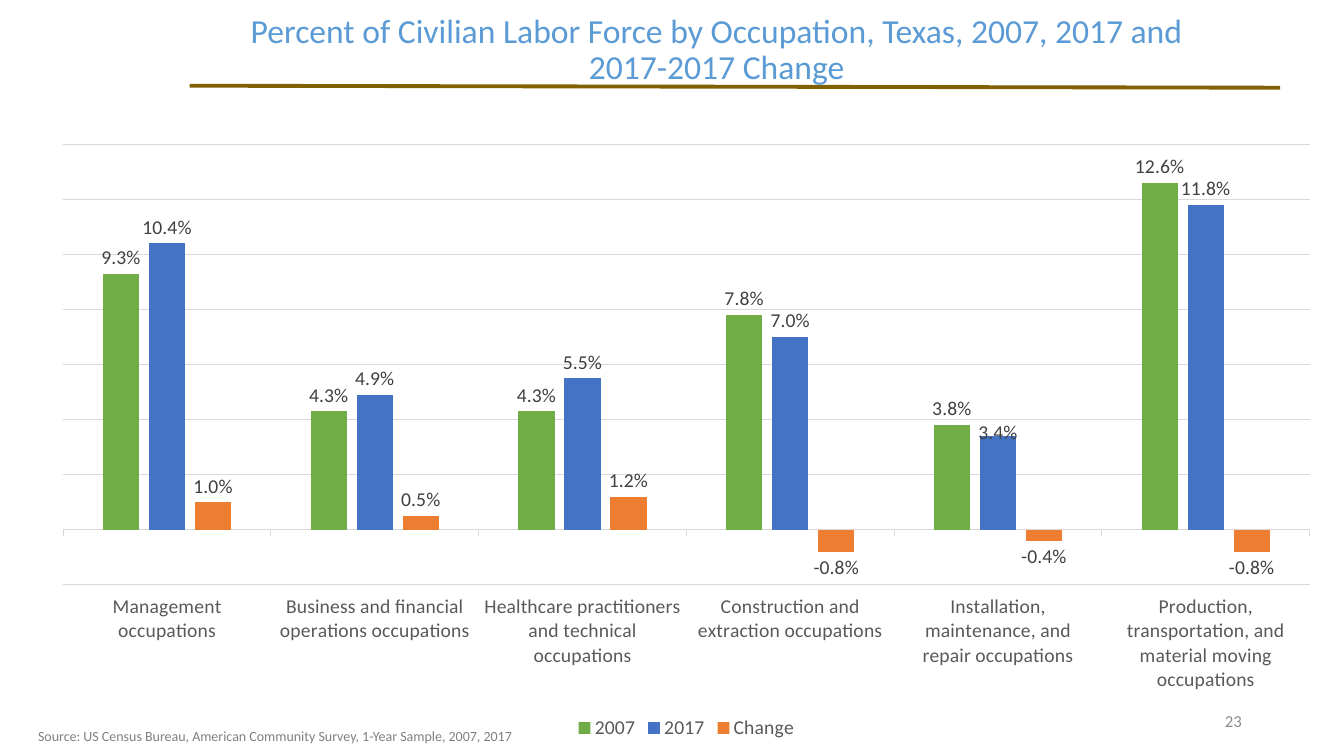
from lxml.etree import SubElement
from pptx import Presentation
from pptx.chart.data import CategoryChartData
from pptx.dml.color import RGBColor
from pptx.enum.chart import XL_CHART_TYPE as ChartType
from pptx.enum.chart import XL_LABEL_POSITION as LabelPosition
from pptx.enum.chart import XL_LEGEND_POSITION as LegendPosition
from pptx.enum.chart import XL_TICK_LABEL_POSITION as TickLabelPosition
from pptx.enum.chart import XL_TICK_MARK as TickMark
from pptx.enum.shapes import MSO_CONNECTOR as Connector
from pptx.enum.text import MSO_ANCHOR as Anchor
from pptx.enum.text import PP_ALIGN as Align
from pptx.oxml import parse_xml
from pptx.oxml.ns import nsdecls, qn
from pptx.util import Cm, Pt

TITLE = "Percent of Civilian Labor Force by Occupation, Texas, 2007, 2017 and 2017-2017 Change"
SOURCE = "Source: US Census Bureau, American Community Survey, 1-Year Sample, 2007, 2017"
PAGE_NUMBER = "23"

OCCUPATIONS = [
    "Management occupations",
    "Business and financial operations occupations",
    "Healthcare practitioners and technical occupations",
    "Construction and extraction occupations",
    "Installation, maintenance, and repair occupations",
    "Production, transportation, and material moving occupations",
]
SERIES = [
    ("2007", "70AD47", (0.093, 0.043, 0.043, 0.078, 0.038, 0.126)),
    ("2017", "4472C4", (0.104, 0.049, 0.055, 0.07, 0.034, 0.118)),
    ("Change", "ED7D31", (0.01, 0.005, 0.012, -0.008, -0.004, -0.008)),
]
LOWERED_LABEL = (1, 4, 0.02)
PLOT_AREA = {"x": 0.02, "y": 0.02, "w": 0.96, "h": 0.72}
PERCENT = "0.0%"

THEME = {
    "font": "Calibri",
    "title": ("5B9BD5", 24),
    "source": ("808080", 10),
    "page": ("8C8C8C", 12),
    "axis": ("595959", 14),
    "label": ("404040", 14),
    "grid": "D9D9D9",
    "rule": "806000",
}


def style_font(font, role):
    color, size = THEME[role]
    font.name = THEME["font"]
    font.size = Pt(size)
    font.bold = False
    font.color.rgb = RGBColor.from_string(color)


def style_line(line, color, width):
    line.color.rgb = RGBColor.from_string(color)
    line.width = Pt(width)


def add_text(slide, text, role, box, align=Align.LEFT, anchor=Anchor.TOP, spacing=1.0):
    shape = slide.shapes.add_textbox(*(Cm(length) for length in box))
    frame = shape.text_frame
    frame.word_wrap = True
    frame.vertical_anchor = anchor
    paragraph = frame.paragraphs[0]
    paragraph.alignment = align
    paragraph.line_spacing = spacing
    run = paragraph.add_run()
    run.text = text
    style_font(run.font, role)


def add_rule(slide):
    rule = slide.shapes.add_connector(
        Connector.STRAIGHT, Cm(4.78), Cm(2.16), Cm(32.26), Cm(2.21))
    style_line(rule.line, THEME["rule"], 2.75)
    SubElement(rule._element.spPr, qn("a:effectLst"))


def manual_layout(settings):
    items = "".join(f'<c:{name} val="{value}"/>' for name, value in settings.items())
    return parse_xml(
        f'<c:layout {nsdecls("c")}><c:manualLayout>{items}</c:manualLayout></c:layout>')


def place_plot_area(chart):
    plot_area = chart._chartSpace.chart.plotArea
    for layout in plot_area.findall(qn("c:layout")):
        plot_area.remove(layout)
    settings = {"layoutTarget": "inner", "xMode": "edge", "yMode": "edge", **PLOT_AREA}
    plot_area.insert(0, manual_layout(settings))


def style_axes(chart):
    category_axis = chart.category_axis
    category_axis.tick_label_position = TickLabelPosition.LOW
    category_axis.major_tick_mark = TickMark.OUTSIDE
    style_font(category_axis.tick_labels.font, "axis")
    style_line(category_axis.format.line, THEME["grid"], 0.75)
    value_axis = chart.value_axis
    value_axis.minimum_scale = -0.02
    value_axis.maximum_scale = 0.14
    value_axis.major_unit = 0.02
    value_axis.has_major_gridlines = True
    style_line(value_axis.major_gridlines.format.line, THEME["grid"], 0.75)
    value_axis.tick_labels.number_format = PERCENT
    value_axis.tick_labels.number_format_is_linked = False
    value_axis.visible = False


def style_series(series, color):
    series.invert_if_negative = False
    series.format.fill.solid()
    series.format.fill.fore_color.rgb = RGBColor.from_string(color)
    labels = series.data_labels
    labels.show_value = True
    labels.position = LabelPosition.OUTSIDE_END
    labels.number_format = PERCENT
    labels.number_format_is_linked = False
    style_font(labels.font, "label")


def lower_label(plot):
    series_index, point_index, offset = LOWERED_LABEL
    series = plot.series[series_index]
    label = series.points[point_index].data_label
    label.position = LabelPosition.OUTSIDE_END
    style_font(label.font, "label")
    element = series.data_labels._element.find(qn("c:dLbl"))
    element.insert(1, manual_layout({"x": 0, "y": offset}))


def add_occupation_chart(slide):
    data = CategoryChartData(number_format=PERCENT)
    data.categories = OCCUPATIONS
    for name, _, values in SERIES:
        data.add_series(name, values)
    chart = slide.shapes.add_chart(
        ChartType.COLUMN_CLUSTERED, Cm(0.94), Cm(3.33), Cm(32.72), Cm(15.42), data).chart
    chart.has_title = False
    style_font(chart.font, "axis")
    chart.has_legend = True
    chart.legend.position = LegendPosition.BOTTOM
    chart.legend.include_in_layout = False
    style_font(chart.legend.font, "axis")
    plot = chart.plots[0]
    plot.vary_by_categories = False
    plot.gap_width = 219
    plot.overlap = -27
    for series, (_, color, _) in zip(plot.series, SERIES):
        style_series(series, color)
    lower_label(plot)
    style_axes(chart)
    place_plot_area(chart)


def main():
    presentation = Presentation()
    presentation.slide_width = Cm(33.87)
    presentation.slide_height = Cm(19.05)
    slide = presentation.slides.add_slide(presentation.slide_layouts[6])
    add_rule(slide)
    add_text(slide, TITLE, "title", (5.36, -0.56, 25.4, 3.68),
             Align.CENTER, Anchor.MIDDLE, 0.9)
    add_occupation_chart(slide)
    add_text(slide, SOURCE, "source", (0.71, 18.21, 17.78, 0.69))
    add_text(slide, PAGE_NUMBER, "page", (23.93, 17.65, 7.62, 1.02),
             Align.RIGHT, Anchor.MIDDLE)
    presentation.save("out.pptx")


if __name__ == "__main__":
    main()
